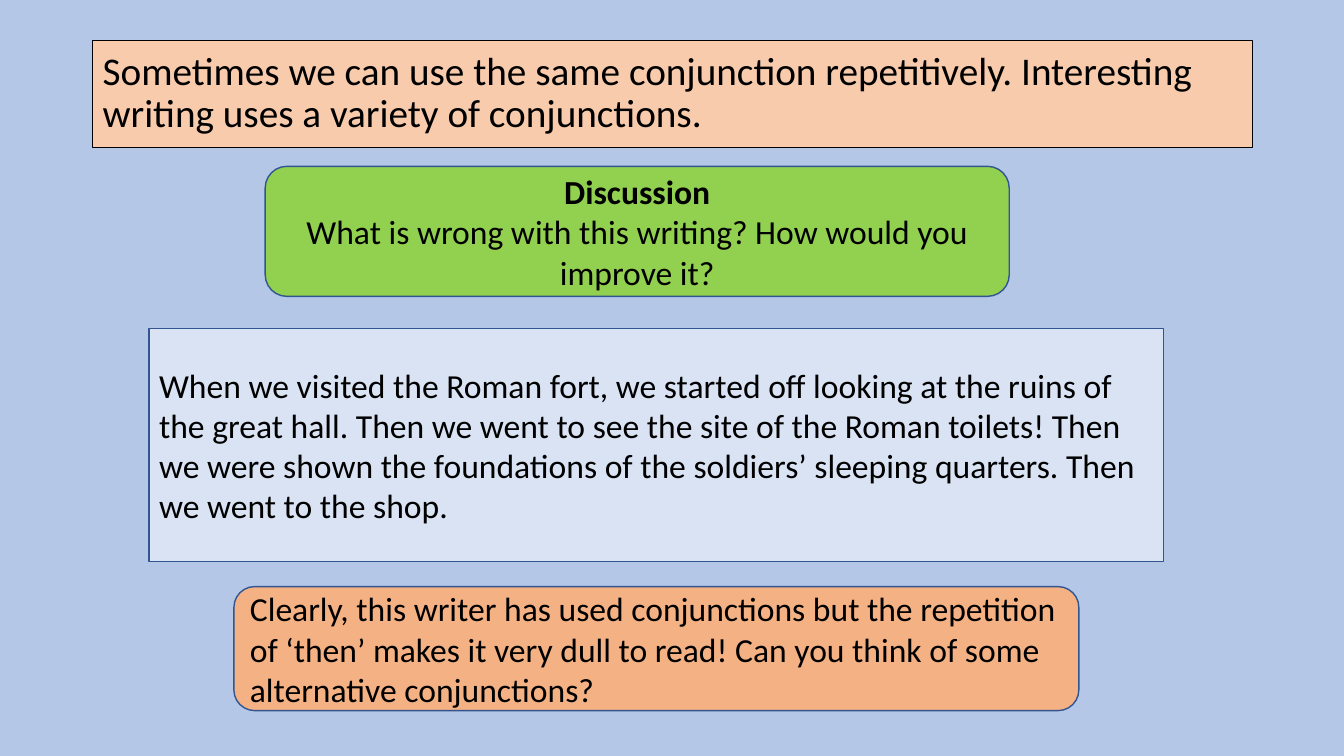
from pptx import Presentation
from pptx import util as u
from pptx.dml.color import RGBColor
from pptx.enum import shapes, text

BLACK = RGBColor(0x00, 0x00, 0x00)
NAVY = RGBColor(0x32, 0x54, 0x91)
SKY = RGBColor(0xB4, 0xC7, 0xE7)
PALE_BLUE = RGBColor(0xDA, 0xE3, 0xF3)
PEACH = RGBColor(0xF8, 0xCB, 0xAD)
ORANGE = RGBColor(0xF4, 0xB1, 0x83)
GREEN = RGBColor(0x92, 0xD0, 0x50)

RECT = shapes.MSO_SHAPE.RECTANGLE
ROUNDED = shapes.MSO_SHAPE.ROUNDED_RECTANGLE
LEFT = text.PP_ALIGN.LEFT
CENTER = text.PP_ALIGN.CENTER

deck = Presentation()
deck.slide_width = u.Inches(13.33)
deck.slide_height = u.Inches(7.5)
page = deck.slides.add_slide(deck.slide_layouts[6])
page.background.fill.solid()
page.background.fill.fore_color.rgb = SKY


def add_panel(paragraphs, *, kind, at, fill, line=NAVY, weight=1, size=24,
              align=LEFT, spacing=1.0, bold_first=False):
    box = page.shapes.add_shape(kind, *[u.Inches(length) for length in at])
    box.shadow.inherit = False
    box.fill.solid()
    box.fill.fore_color.rgb = fill
    box.line.color.rgb = line
    box.line.width = u.Pt(weight)
    frame = box.text_frame
    frame.word_wrap = True
    frame.vertical_anchor = text.MSO_ANCHOR.MIDDLE
    for index, wording in enumerate(paragraphs):
        para = frame.add_paragraph() if index else frame.paragraphs[0]
        para.alignment = align
        para.line_spacing = spacing
        span = para.add_run()
        span.text = wording
        span.font.name = "Calibri"
        span.font.size = u.Pt(size)
        span.font.bold = bold_first and index == 0
        span.font.color.rgb = BLACK


add_panel(
    ["Sometimes we can use the same conjunction repetitively. "
     "Interesting writing uses a variety of conjunctions."],
    kind=RECT, at=(0.92, 0.4, 11.5, 1.06), fill=PEACH,
    line=BLACK, weight=0.75, size=28, spacing=0.9)

add_panel(
    ["Discussion",
     "What is wrong with this writing? How would you improve it?"],
    kind=ROUNDED, at=(2.63, 1.65, 7.38, 1.29), fill=GREEN,
    align=CENTER, bold_first=True)

add_panel(
    ["When we visited the Roman fort, we started off looking at the ruins "
     "of the great hall. Then we went to see the site of the Roman toilets! "
     "Then we were shown the foundations of the soldiers’ sleeping quarters. "
     "Then we went to the shop."],
    kind=RECT, at=(1.48, 3.26, 10.06, 2.31), fill=PALE_BLUE)

add_panel(
    ["Clearly, this writer has used conjunctions but the repetition of "
     "‘then’ makes it very dull to read! Can you think of some alternative "
     "conjunctions?"],
    kind=ROUNDED, at=(2.32, 5.82, 8.38, 1.23), fill=ORANGE)

deck.save("out.pptx")
